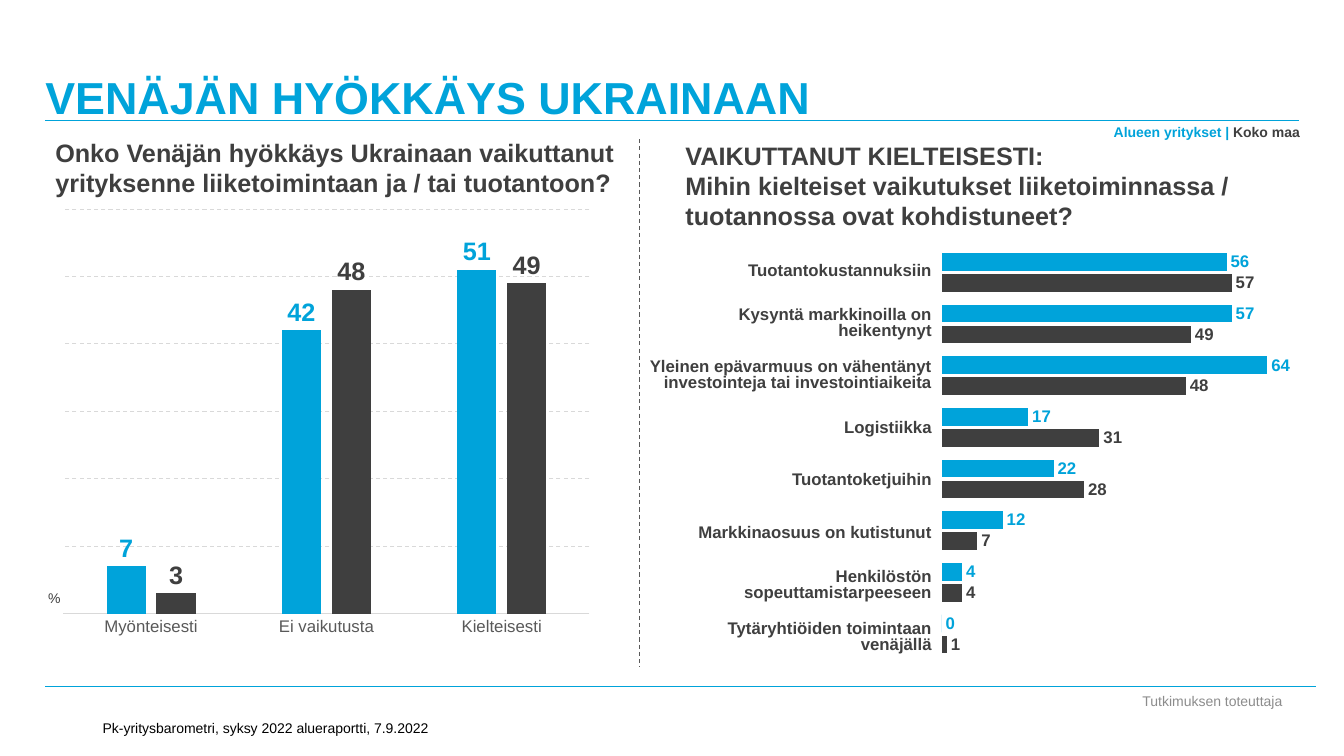
from lxml import etree
from pptx import Presentation
from pptx.chart.data import CategoryChartData
from pptx.dml.color import RGBColor
from pptx.enum.chart import XL_CHART_TYPE, XL_LABEL_POSITION, XL_TICK_LABEL_POSITION, XL_TICK_MARK
from pptx.enum.dml import MSO_LINE
from pptx.enum.shapes import MSO_CONNECTOR
from pptx.enum.text import MSO_ANCHOR, PP_ALIGN
from pptx.oxml.ns import qn
from pptx.util import Inches, Pt

COLUMN, BAR = XL_CHART_TYPE.COLUMN_CLUSTERED, XL_CHART_TYPE.BAR_CLUSTERED
OUTSIDE, NO_LABELS = XL_LABEL_POSITION.OUTSIDE_END, XL_TICK_LABEL_POSITION.NONE
NO_TICK, DASH = XL_TICK_MARK.NONE, MSO_LINE.DASH
STRAIGHT = MSO_CONNECTOR.STRAIGHT
TOP, MIDDLE, BOTTOM = MSO_ANCHOR.TOP, MSO_ANCHOR.MIDDLE, MSO_ANCHOR.BOTTOM
LEFT, CENTER, RIGHT = PP_ALIGN.LEFT, PP_ALIGN.CENTER, PP_ALIGN.RIGHT

W, H = 13.33, 7.5
FONT = "Arial"
COLORS = {"blue": "00A3DA", "dark": "3F3F3F", "axis": "595959",
          "grid": "D9D9D9", "muted": "8C8C8C", "black": "000000"}
SERIES_COLORS = ("blue", "dark")

ANSWERS = ["Myönteisesti", "Ei vaikutusta", "Kielteisesti"]
ANSWER_VALUES = [(7, 42, 51), (3, 48, 49)]
EFFECTS = [("Tuotantokustannuksiin", 2.7),
           ("Kysyntä markkinoilla on heikentynyt", 2.7),
           ("Yleinen epävarmuus on vähentänyt investointeja tai investointiaikeita", 3),
           ("Logistiikka", 2.7),
           ("Tuotantoketjuihin", 2.7),
           ("Markkinaosuus on kutistunut", 2.7),
           ("Henkilöstön sopeuttamistarpeeseen", 2.7),
           ("Tytäryhtiöiden toimintaan venäjällä", 2.7)]
EFFECT_VALUES = [(56, 57, 64, 17, 22, 12, 4, 0), (57, 49, 48, 31, 28, 7, 4, 1)]


def rgb(name):
    """Return the named colour."""
    return RGBColor.from_string(COLORS[name])


def style_font(font, size, color, bold=False):
    """Apply the slide's font with a size, colour and weight."""
    for key, value in {"name": FONT, "size": Pt(size), "bold": bold}.items():
        setattr(font, key, value)
    font.color.rgb = rgb(color)


def style_line(line, color, dash=None):
    """Give a line its colour, width and dash."""
    line.color.rgb = rgb(color)
    line.width = Pt(0.75)
    if dash:
        line.dash_style = dash


def add_text(s, box, runs, size, bold=False, align=LEFT, anchor=TOP,
             wrap=True, spacing=None, inset=None):
    """Add one paragraph of (text, colour) runs; a newline breaks the line."""
    tf = s.shapes.add_textbox(*map(Inches, box)).text_frame
    tf.word_wrap, tf.vertical_anchor = wrap, anchor
    if inset is not None:
        for side in ("left", "top", "right", "bottom"):
            setattr(tf, f"margin_{side}", Inches(inset))
    p = tf.paragraphs[0]
    p.alignment, p.line_spacing = align, spacing
    for text, color in runs:
        for i, part in enumerate(text.split("\n")):
            if i:
                p.add_line_break()
            r = p.add_run()
            r.text = part
            style_font(r.font, size, color, bold)


def add_rule(s, x1, y1, x2, y2, color, dash=None):
    """Draw a thin straight line."""
    line = s.shapes.add_connector(STRAIGHT, *map(Inches, (x1, y1, x2, y2)))
    style_line(line.line, color, dash)
    etree.SubElement(line._element.spPr, qn("a:effectLst"))


def set_plot_box(chart, shares):
    """Fix the inner plot area at shares of the chart's size."""
    area = chart._chartSpace.chart.plotArea
    for old in area.findall(qn("c:layout")):
        area.remove(old)
    layout = etree.Element(qn("c:layout"))
    manual = etree.SubElement(layout, qn("c:manualLayout"))
    settings = [("layoutTarget", "inner"), ("xMode", "edge"), ("yMode", "edge")]
    for tag, value in settings + list(zip("xywh", shares)):
        etree.SubElement(manual, qn(f"c:{tag}")).set("val", str(value))
    area.insert(0, layout)


def add_bars(s, box, kind, cats, values, top, gap, overlap, label_size, plot_box):
    """Add a two-series clustered chart with value labels."""
    data = CategoryChartData(number_format="#,##0")
    data.categories = cats
    for i, vals in enumerate(values, 1):
        data.add_series(f"Series {i}", vals)
    chart = s.shapes.add_chart(kind, *map(Inches, box), data).chart
    chart.has_legend = chart.has_title = False
    style_font(chart.font, 10, "black")
    plot = chart.plots[0]
    plot.gap_width, plot.overlap, plot.vary_by_categories = gap, overlap, False
    for series, color in zip(plot.series, SERIES_COLORS):
        series.format.fill.solid()
        series.format.fill.fore_color.rgb = rgb(color)
        series.invert_if_negative = False
        labels = series.data_labels
        for key, value in {"show_value": True, "position": OUTSIDE, "number_format": "#,##0",
                           "number_format_is_linked": False}.items():
            setattr(labels, key, value)
        style_font(labels.font, label_size, color, True)
    axis = chart.value_axis
    for key, value in {"minimum_scale": 0, "maximum_scale": top, "major_unit": 10,
                       "has_major_gridlines": False, "visible": False,
                       "tick_label_position": NO_LABELS}.items():
        setattr(axis, key, value)
    set_plot_box(chart, plot_box)
    return chart


def header(s, x, y, w, h):
    """Place the title, its rule and the colour key."""
    add_text(s, (x, y, w, h), [("VENÄJÄN HYÖKKÄYS UKRAINAAN", "blue")], 32, True,
             anchor=BOTTOM, inset=0)
    add_rule(s, x, y + 1.2, x + w, y + 1.2, "blue")
    add_text(s, (x + w - 4.75, y + 1.18, 4.86, 0.27),
             [("Alueen yritykset | ", "blue"), ("Koko maa", "dark")], 10, True, RIGHT)


def answers_panel(s, x, y, w, h):
    """Place the question, the column chart and its unit."""
    add_text(s, (x, y, w, 0.71), [("Onko Venäjän hyökkäys Ukrainaan vaikuttanut yrityksenne "
                                   "liiketoimintaan ja / tai tuotantoon?", "dark")], 18, True)
    chart = add_bars(s, (x + 0.07, y + 0.71, 5.48, h - 0.71), COLUMN, ANSWERS, ANSWER_VALUES,
                     60, 219, -27, 18, (0.02, 0.011, 0.952, 0.821))
    chart.value_axis.has_major_gridlines = True
    style_line(chart.value_axis.major_gridlines.format.line, "grid", DASH)
    axis = chart.category_axis
    axis.major_tick_mark = axis.minor_tick_mark = NO_TICK
    style_line(axis.format.line, "grid")
    style_font(axis.tick_labels.font, 12, "axis")
    add_text(s, (x - 0.07, y + 4.49, 0.33, 0.27), [("%", "dark")], 10, wrap=False)


def effects_panel(s, x, y, w, h):
    """Place the divider, the question, the bar chart and its row labels."""
    add_rule(s, x, y + 0.04, x, y + 5.28, "axis", DASH)
    add_text(s, (x + 0.36, y, 5.87, 1.01),
             [("VAIKUTTANUT KIELTEISESTI:\nMihin kielteiset vaikutukset liiketoiminnassa / "
               "tuotannossa ovat kohdistuneet?", "dark")], 18, True)
    cats = [str(i + 1) for i in range(len(EFFECTS))]
    chart = add_bars(s, (x + 3, y + 0.68, w - 3, h - 0.68), BAR, cats, EFFECT_VALUES,
                     70, 75, -19, 12, (0, 0.094, 0.906, 0.903))
    chart.category_axis.reverse_order = True
    chart.category_axis.visible = False
    row, label_h = 0.52, 0.42
    for i, (label, label_w) in enumerate(EFFECTS):
        add_text(s, (x + 3 - label_w, y + 1.14 + i * row, label_w, label_h),
                 [(label, "dark")], 12, True, RIGHT, MIDDLE, spacing=0.8)


def footer(s, x, y, w, h):
    """Place the bottom rule, the source and the survey maker's label."""
    add_rule(s, x, y, x + w, y, "blue")
    add_text(s, (x + w - 1.89, y + 0.01, 1.73, 0.26), [("Tutkimuksen toteuttaja", "muted")],
             10, align=CENTER, anchor=MIDDLE, wrap=False)
    add_text(s, (x + 0.47, y + h - 0.35, 4.17, 0.35),
             [("Pk-yritysbarometri, syksy 2022 alueraportti, 7.9.2022", "black")],
             10, anchor=BOTTOM)


def main():
    """Build and save the slide."""
    prs = Presentation()
    prs.slide_width, prs.slide_height = Inches(W), Inches(H)
    s = prs.slides.add_slide(prs.slide_layouts[6])
    header(s, 0.45, 0, 12.43, 1.22)
    answers_panel(s, 0.45, 1.31, 5.87, 5.6)
    effects_panel(s, 6.34, 1.34, 6.9, 5.22)
    footer(s, 0.45, 6.81, 12.6, 0.54)
    prs.save("out.pptx")


if __name__ == "__main__":
    main()
